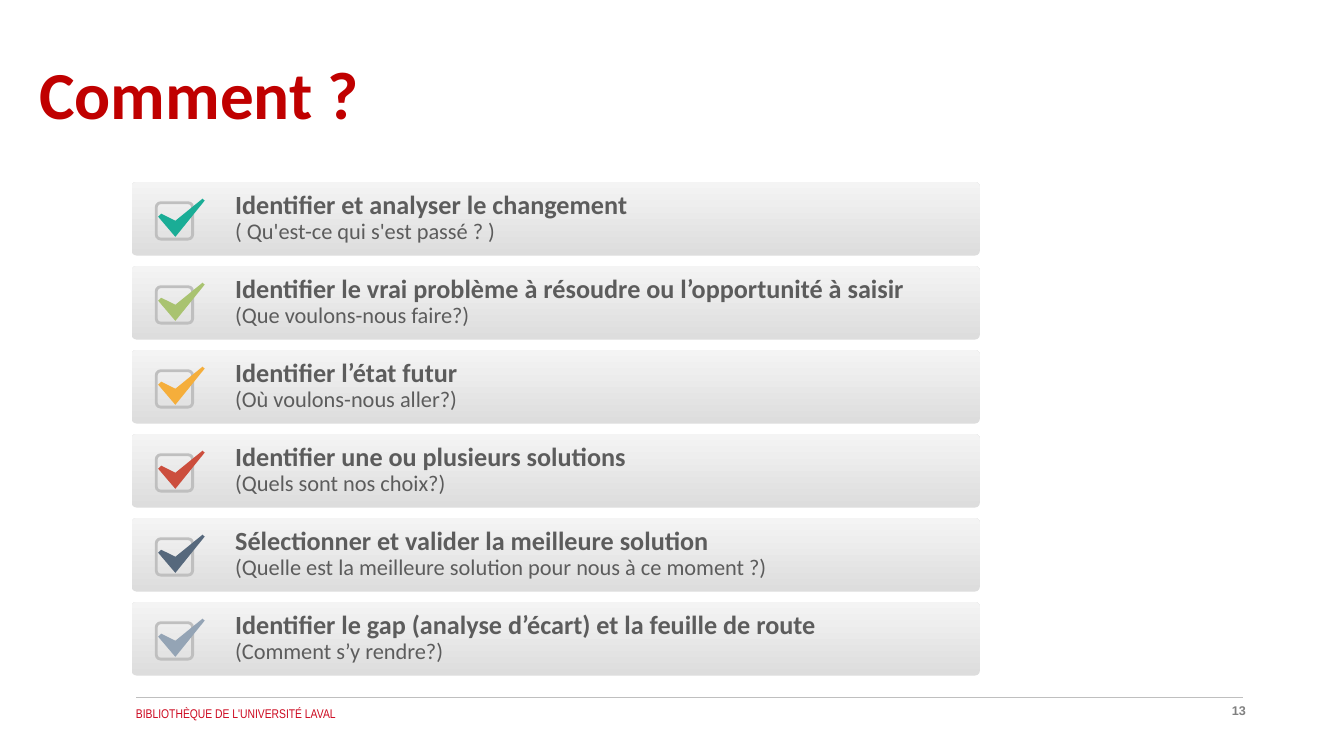
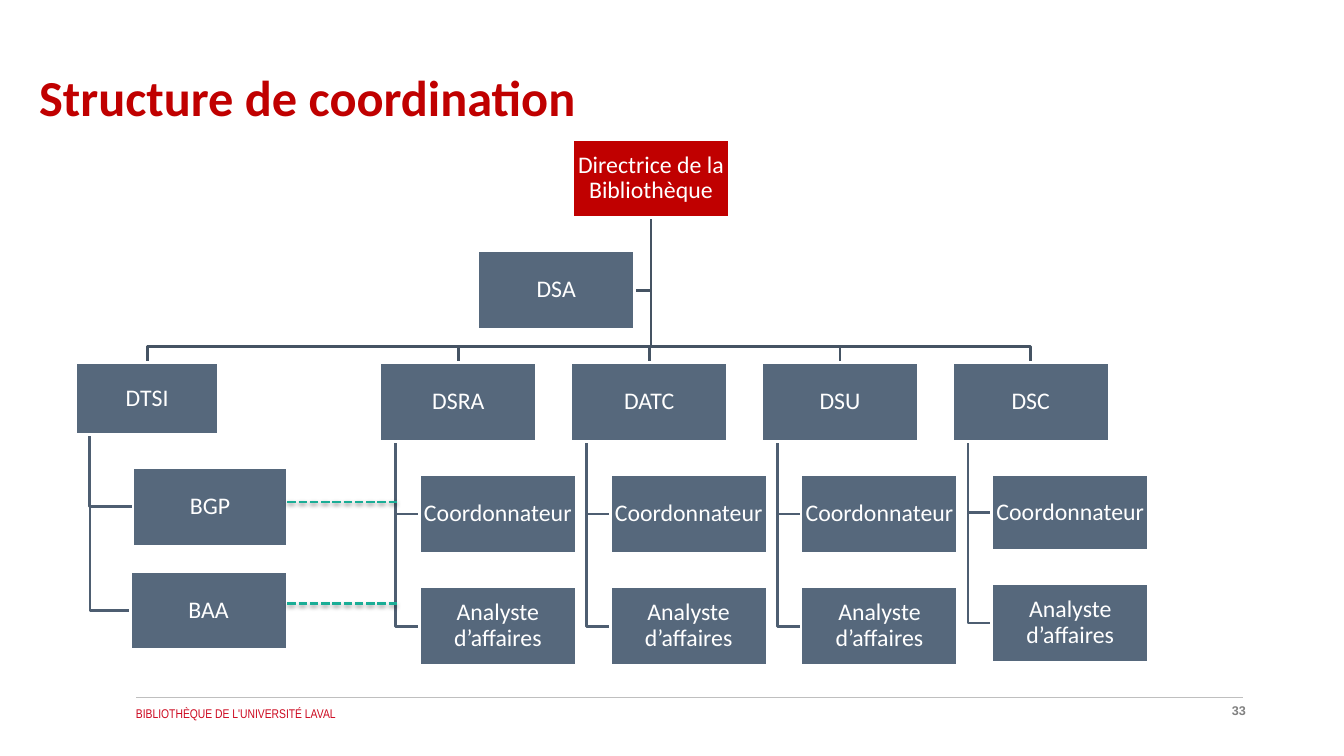
"""Build two slides: a checklist of steps and a coordination chart."""
import pptx
import pptx.dml.color
import pptx.enum.dml
import pptx.enum.shapes
import pptx.enum.text
import pptx.oxml
import pptx.oxml.ns
import pptx.util

Pt = pptx.util.Pt
RGB = pptx.dml.color.RGBColor
SHAPE = pptx.enum.shapes.MSO_SHAPE
ALIGN = pptx.enum.text.PP_ALIGN
ANCHOR = pptx.enum.text.MSO_ANCHOR

RED = RGB(0xC0, 0x00, 0x00)
FOOTER_RED = RGB(0xCD, 0x09, 0x20)
TEXT_GREY = RGB(0x5C, 0x5C, 0x5C)
NUMBER_GREY = RGB(0x80, 0x80, 0x80)
RULE_GREY = RGB(0xBF, 0xBF, 0xBF)
BAR_BOTTOM = RGB(0xDD, 0xDD, 0xDD)
BAR_TOP = RGB(0xF4, 0xF4, 0xF4)
SLATE = RGB(0x56, 0x68, 0x7C)
TRUNK = RGB(0x45, 0x53, 0x63)
BRANCH = RGB(0x4E, 0x5E, 0x71)
TEAL = RGB(0x1A, 0xAD, 0x96)
GREEN = RGB(0xA9, 0xC3, 0x70)
ORANGE = RGB(0xF5, 0xAE, 0x3B)
BRICK = RGB(0xCC, 0x4E, 0x3D)
MIST = RGB(0x94, 0xA4, 0xB5)
WHITE = RGB(0xFF, 0xFF, 0xFF)

FOOTER = "BIBLIOTHÈQUE DE L'UNIVERSITÉ LAVAL"
FOOTER_FONT = {"name": "Arial Narrow", "size": Pt(9), "color": FOOTER_RED}
NUMBER_FONT = {"name": "Arial", "size": Pt(9), "color": NUMBER_GREY, "bold": True}
TITLE_FONT = {"name": "Calibri", "color": RED, "bold": True}
STEP_FONT = {"name": "Calibri", "size": Pt(18.7), "color": TEXT_GREY, "bold": True}
QUESTION_FONT = {"name": "Calibri", "size": Pt(16), "color": TEXT_GREY, "bold": False}
BOX_FONT = {"name": "Calibri", "size": Pt(17), "color": WHITE}

STEPS = [
    ("Identifier et analyser le changement", "( Qu'est-ce qui s'est passé ? )", TEAL),
    ("Identifier le vrai problème à résoudre ou l’opportunité à saisir",
     "(Que voulons-nous faire?)", GREEN),
    ("Identifier l’état futur", "(Où voulons-nous aller?)", ORANGE),
    ("Identifier une ou plusieurs solutions", "(Quels sont nos choix?)", BRICK),
    ("Sélectionner et valider la meilleure solution",
     "(Quelle est la meilleure solution pour nous à ce moment ?)", SLATE),
    ("Identifier le gap (analyse d’écart) et la feuille de route",
     "(Comment s’y rendre?)", MIST),
]
STEP_TOP, STEP_PITCH = 130, 60
TICK = [(144.7, 11.9), (146.2, 13.3), (125.3, 39.2), (113, 24.8), (115.2, 22.7), (125.3, 27.7)]

BOX_W, BOX_H = 112, 56
COLUMN_LEFT, COLUMN_PITCH = 271.4, 136.3
ROW_TOP, ROW_PITCH = 259.2, 80
INDENT = 28.2
BUS_Y = 247.5
DIRECTOR = ("Directrice de la Bibliothèque", (409, 99.4, BOX_W, BOX_H))
ASSISTANT = ("DSA", (341.3, 179.3, BOX_W, BOX_H))
DEPARTMENTS = ["DSRA", "DATC", "DSU", "DSC"]
ROLES = ["Coordonnateur", "Analyste d’affaires"]
ROLE_FRAMES = {"DSC": [(54, 0), (BOX_H, -2.2)]}
DTSI = ("DTSI", (54, ROW_TOP, 102.2, 51.1),
        [("BGP", (95, 334, 110.2, BOX_H)), ("BAA", (93, 408.2, BOX_W, BOX_H))])
DASH_X, DASH_YS = (205.2, 283.7), (358.6, 431.3)
DASH_SHADOW = (
    '<a:effectLst %s><a:outerShdw blurRad="39370" dist="20320" dir="5400000" rotWithShape="0">'
    '<a:srgbClr val="000000"><a:alpha val="38000"/></a:srgbClr></a:outerShdw></a:effectLst>'
    % pptx.oxml.ns.nsdecls("a"))
NO_EFFECT = "<a:effectLst %s/>" % pptx.oxml.ns.nsdecls("a")


def frame(values):
    return [Pt(v) for v in values]


def set_font(font, fmt):
    for name, value in fmt.items():
        if name == "color":
            font.color.rgb = value
        else:
            setattr(font, name, value)


def add_run(p, text, fmt):
    r = p.add_run()
    r.text = text
    set_font(r.font, fmt)


def set_margins(tf, margin):
    for side in ("left", "top", "right", "bottom"):
        setattr(tf, "margin_" + side, Pt(margin))


def add_text(s, at, text, fmt, align=ALIGN.LEFT):
    tf = s.shapes.add_textbox(*frame(at)).text_frame
    tf.word_wrap = True
    p = tf.paragraphs[0]
    p.alignment = align
    add_run(p, text, fmt)
    return tf


def add_shape(s, kind, at, fill=None, line=None):
    sp = s.shapes.add_shape(kind, *frame(at))
    paint(sp, fill, line)
    return sp


def paint(sp, fill=None, line=None):
    sp.shadow.inherit = False
    for target, color in ((sp.fill, fill), (sp.line.fill, line)):
        if color is None:
            target.background()
        else:
            target.solid()
            target.fore_color.rgb = color
    if line is not None:
        sp.line.width = Pt(2)


def add_path(s, points, close=False, **colors):
    start, *rest = [frame(point) for point in points]
    builder = s.shapes.build_freeform(*start)
    builder.add_line_segments(rest, close=close)
    paint(builder.convert_to_shape(), **colors)


def add_line(s, start, end, color, width, effect=NO_EFFECT):
    ln = s.shapes.add_connector(
        pptx.enum.shapes.MSO_CONNECTOR.STRAIGHT, *frame(start + end))
    ln.line.color.rgb = color
    ln.line.width = Pt(width)
    ln._element.spPr.append(pptx.oxml.parse_xml(effect))
    return ln


def add_slide(prs, title, size, top, number):
    s = prs.slides.add_slide(prs.slide_layouts[5])
    sp = s.shapes.title
    sp.left, sp.top, sp.width, sp.height = frame((28, top, 878, 52))
    tf = sp.text_frame
    tf.auto_size = pptx.enum.text.MSO_AUTO_SIZE.NONE
    tf.vertical_anchor = ANCHOR.MIDDLE
    set_margins(tf, 0)
    p = tf.paragraphs[0]
    p.alignment = ALIGN.LEFT
    add_run(p, title, dict(TITLE_FONT, size=Pt(size)))
    add_text(s, (90, 500.4, 580, 18), FOOTER, FOOTER_FONT)
    add_line(s, (97.2, 498.2), (887.8, 498.2), RULE_GREY, 0.25)
    add_text(s, (797, 498.2, 100, 18), number, NUMBER_FONT, ALIGN.RIGHT)
    return s


def add_step(s, top, step, question, color):
    bar = add_shape(s, SHAPE.ROUNDED_RECTANGLE, (94, top, 606, 52.6))
    bar.adjustments[0] = 0.07
    bar.fill.gradient()
    bar.fill.gradient_angle = 90
    for stop, shade in zip(bar.fill.gradient_stops, (BAR_BOTTOM, BAR_TOP)):
        stop.color.rgb = shade
    box = add_shape(s, SHAPE.ROUNDED_RECTANGLE, (111.6, top + 14.8, 26, 26), line=RULE_GREY)
    box.adjustments[0] = 0.125
    add_path(s, [(x, top + y) for x, y in TICK], close=True, fill=color)
    tf = add_text(s, (168, top + 7, 772, 38), step, STEP_FONT)
    set_margins(tf, 0)
    p = tf.paragraphs[0]
    p.line_spacing = 0.9
    p.add_line_break()
    add_run(p, question, QUESTION_FONT)


def add_box(s, text, at, fill=SLATE):
    tf = add_shape(s, SHAPE.RECTANGLE, at, fill, WHITE).text_frame
    tf.word_wrap = True
    tf.vertical_anchor = ANCHOR.MIDDLE
    set_margins(tf, 0.8)
    p = tf.paragraphs[0]
    p.alignment = ALIGN.CENTER
    p.line_spacing = 0.9
    add_run(p, text, BOX_FONT)


def departments():
    yield DTSI
    for i, name in enumerate(DEPARTMENTS):
        left = COLUMN_LEFT + i * COLUMN_PITCH
        sizes = ROLE_FRAMES.get(name, [(BOX_H, 0)] * len(ROLES))
        roles = [(role, (left + INDENT, ROW_TOP + j * ROW_PITCH + shift, BOX_W, height))
                 for j, (role, (height, shift)) in enumerate(zip(ROLES, sizes), 1)]
        yield name, (left, ROW_TOP, BOX_W, BOX_H), roles


def add_chart_boxes(s):
    x, y, w, h = DIRECTOR[1]
    trunk_x, trunk_y = x + w / 2, y + h
    ax, ay, aw, ah = ASSISTANT[1]
    middle = ay + ah / 2
    add_path(s, [(trunk_x, trunk_y), (trunk_x, middle), (ax + aw, middle)], line=TRUNK)
    boxes = [ASSISTANT]
    for name, (x, y, w, h), children in departments():
        boxes += [(name, (x, y, w, h))] + children
        center, drop = x + w / 2, x + w / 10
        add_path(s, [(trunk_x, trunk_y), (trunk_x, BUS_Y), (center, BUS_Y), (center, y)],
                 line=TRUNK)
        for _, (cx, cy, _, ch) in children:
            middle = cy + ch / 2
            add_path(s, [(drop, y + h), (drop, middle), (cx, middle)], line=BRANCH)
    add_box(s, *DIRECTOR, fill=RED)
    for text, at in boxes:
        add_box(s, text, at)


def main():
    prs = pptx.Presentation()
    prs.slide_width, prs.slide_height = Pt(960), Pt(540)

    s = add_slide(prs, "Comment ?", 48, 40.3, "13")
    for i, step in enumerate(STEPS):
        add_step(s, STEP_TOP + i * STEP_PITCH, *step)

    s = add_slide(prs, "Structure de coordination", 36, 42.5, "33")
    add_chart_boxes(s)
    for y in DASH_YS:
        ln = add_line(s, (DASH_X[0], y), (DASH_X[1], y), TEAL, 2, DASH_SHADOW)
        ln.line.dash_style = pptx.enum.dml.MSO_LINE.SQUARE_DOT

    prs.save("out.pptx")


if __name__ == "__main__":
    main()
